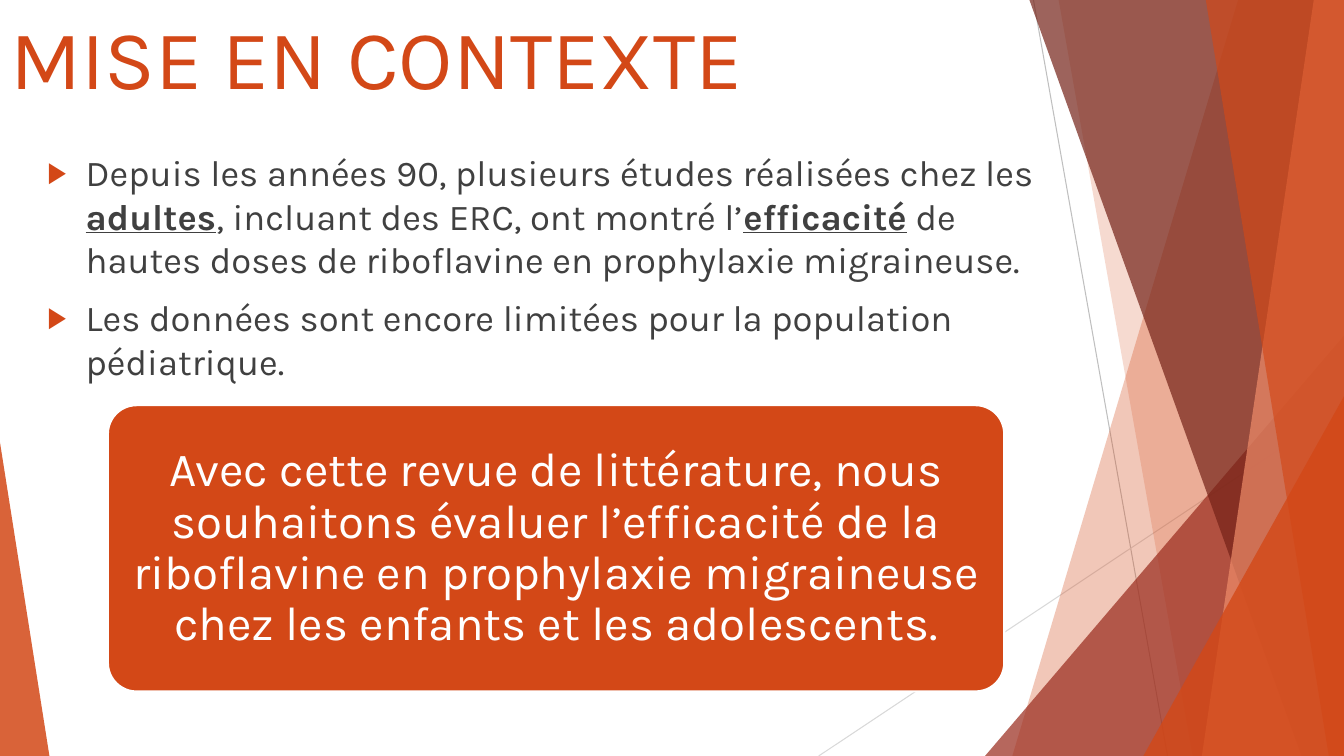
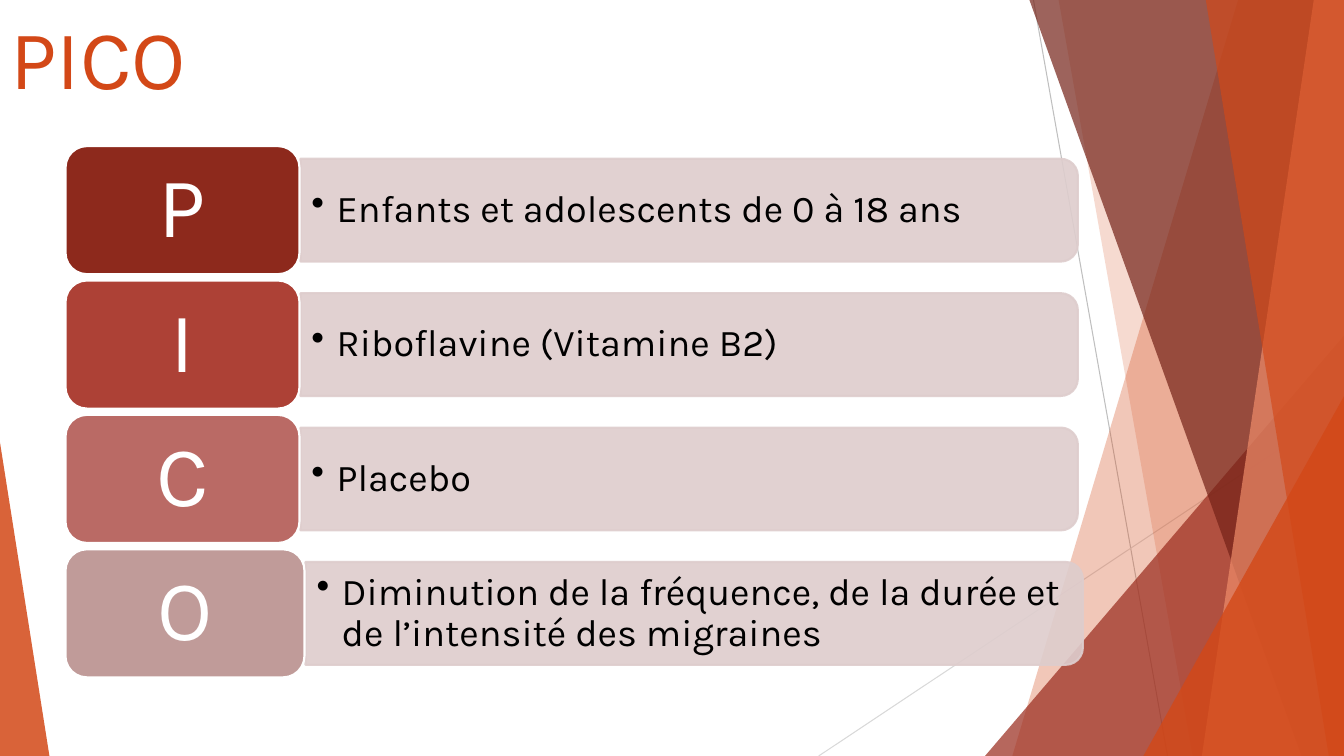
from dataclasses import dataclass

from lxml.etree import SubElement
from pptx import Presentation
from pptx.dml.color import RGBColor
from pptx.enum.shapes import MSO_CONNECTOR, MSO_SHAPE
from pptx.enum.text import MSO_ANCHOR, MSO_AUTO_SIZE, PP_ALIGN
from pptx.oxml.ns import qn
from pptx.util import Inches, Pt

STRAIGHT = MSO_CONNECTOR.STRAIGHT
ROUND = MSO_SHAPE.ROUNDED_RECTANGLE
TAB = MSO_SHAPE.ROUND_2_SAME_RECTANGLE
WEDGE = MSO_SHAPE.ISOSCELES_TRIANGLE
TOP, MIDDLE = MSO_ANCHOR.TOP, MSO_ANCHOR.MIDDLE
LEFT, CENTER = PP_ALIGN.LEFT, PP_ALIGN.CENTER
FIXED = MSO_AUTO_SIZE.NONE

WIDE, HIGH = 13.33, 7.5


@dataclass(frozen=True)
class Theme:
    font: str = "Karla"
    main: str = "D34817"
    brick: str = "9B2D1F"
    dark: str = "742217"
    peach: str = "EF8C6A"
    ink: str = "404040"
    black: str = "000000"
    white: str = "FFFFFF"
    bar: str = "DECDCD"
    gray: str = "BFBFBF"
    pale: str = "D9D9D9"
    tiles: tuple = ("8D291C", "AD4136", "BA6A65", "C09B99")
    title: int = 60
    body: int = 26
    call: int = 34
    tile: int = 61
    item: int = 27


class Deck:
    def __init__(self, theme):
        self.theme = theme
        self.prs = Presentation()
        self.prs.slide_width = Inches(WIDE)
        self.prs.slide_height = Inches(HIGH)
        self.slide = None

    def open(self, layout, title):
        self.slide = self.prs.slides.add_slide(self.prs.slide_layouts[layout])
        box = self.slide.shapes.title
        self.place(box, 0, 0, 9.4, 1.44)
        para = self.frame(box, TOP)
        para.alignment = LEFT
        self.run(para, title, self.theme.title, self.theme.main)

    def place(self, shape, left, top, width, height):
        shape.left, shape.top = Inches(left), Inches(top)
        shape.width, shape.height = Inches(width), Inches(height)

    def frame(self, shape, anchor, side=0.1, edge=0.05):
        frame = shape.text_frame
        frame.word_wrap = True
        frame.auto_size = FIXED
        frame.vertical_anchor = anchor
        frame.margin_left = frame.margin_right = Inches(side)
        frame.margin_top = frame.margin_bottom = Inches(edge)
        return frame.paragraphs[0]

    def run(self, para, text, size, color, strong=False):
        run = para.add_run()
        run.text = text
        font = run.font
        font.name, font.size = self.theme.font, Pt(size)
        font.bold = font.underline = strong
        font.color.rgb = RGBColor.from_string(color)

    def bullet(self, para, mark, indent, color, scale):
        props = para._p.get_or_add_pPr()
        props.set("marL", str(Inches(indent)))
        props.set("indent", str(-Inches(indent)))
        tint = SubElement(props, qn("a:buClr"))
        SubElement(tint, qn("a:srgbClr"), val=color)
        SubElement(props, qn("a:buSzPct"), val=str(scale * 1000))
        SubElement(props, qn("a:buChar"), char=mark)

    def paint(self, shape, fill, alpha=100, line=None):
        shape.shadow.inherit = False
        shape.fill.solid()
        shape.fill.fore_color.rgb = RGBColor.from_string(fill)
        if line:
            shape.line.color.rgb = RGBColor.from_string(line)
            shape.line.width = Pt(1.5)
        else:
            shape.line.fill.background()
        if alpha < 100:
            for tint in shape.element.spPr.iter(qn("a:srgbClr")):
                SubElement(tint, qn("a:alpha"), val=str(alpha * 1000))

    def shape(self, kind, spot, fill, alpha=100, line=None, bend=None):
        shape = self.slide.shapes.add_shape(kind, *map(Inches, spot))
        if bend is not None:
            shape.adjustments[0] = bend
        self.paint(shape, fill, alpha, line)
        return shape

    def line(self, start, end, color):
        line = self.slide.shapes.add_connector(
            STRAIGHT, *map(Inches, start + end))
        line.line.color.rgb = RGBColor.from_string(color)
        line.line.width = Pt(0.75)
        SubElement(line.element.spPr, qn("a:effectLst"))
        return line

    def band(self, high, low, fill, alpha):
        pen = self.slide.shapes.build_freeform(Inches(high), 0)
        ends = ((WIDE, 0), (WIDE, HIGH), (low, HIGH))
        pen.add_line_segments([(Inches(x), Inches(y)) for x, y in ends])
        shape = pen.convert_to_shape()
        self.paint(shape, fill, alpha)
        return shape

    def wedge(self, left, top, width, fill, alpha, peak):
        spot = (left, top, width, HIGH - top)
        return self.shape(WEDGE, spot, fill, alpha, bend=peak)

    def decor(self):
        look = self.theme
        parts = (
            self.line((10.25, 0), (11.58, HIGH), look.gray),
            self.line((WIDE, 4.03), (8.12, HIGH), look.pale),
            self.band(12.28, 10.04, look.main, 30),
            self.band(10.5, 11.83, look.main, 20),
            self.wedge(9.77, 3.33, 3.56, look.brick, 72, 1),
            self.band(10.21, 12.91, look.dark, 70),
            self.band(13.03, 11.92, look.peach, 70),
            self.band(11.96, 13.18, look.main, 65),
            self.wedge(11.34, 3.93, 1.99, look.main, 80, 1),
            self.wedge(0, 4.39, 0.49, look.main, 85, 0),
        )
        tree = self.prs.slide_master.shapes.element
        for rank, part in enumerate(parts):
            node = part.element
            next(node.iter(qn("p:cNvPr"))).set("id", str(100 + rank))
            tree.insert(2 + rank, node)

    def list(self, items):
        look = self.theme
        box = self.slide.placeholders[1]
        self.place(box, 0.37, 1.44, 10.3, 2.12)
        para = self.frame(box, TOP)
        for rank, item in enumerate(items):
            if rank:
                para = box.text_frame.add_paragraph()
            para.space_before = Pt(10)
            self.bullet(para, "▶", 0.38, look.main, 80)
            for text, strong in item:
                self.run(para, text, look.body, look.ink, strong)

    def card(self, spot, fill, text, size, side, edge, bend=None):
        card = self.shape(ROUND, spot, fill, line=self.theme.white, bend=bend)
        para = self.frame(card, MIDDLE, side, edge)
        para.alignment = CENTER
        para.line_spacing = 0.9
        self.run(para, text, size, self.theme.white)

    def row(self, rank, mark, text, width):
        look = self.theme
        left, high = 0.65, 1.27
        top = 1.45 + rank * 4 / 3
        mid = top + high / 2
        start = left + width + 0.01
        long, thick = 7.71, 1.02
        spot = (start + (long - thick) / 2, mid - long / 2, thick, long)
        self.shape(TAB, spot, look.bar, 90, look.bar).rotation = 90
        note = self.slide.shapes.add_textbox(
            *map(Inches, (start, mid - 0.46, 7.66, 0.92)))
        para = self.frame(note, MIDDLE, 0.11, 0.06)
        para.line_spacing = 0.9
        self.bullet(para, "•", 0.25, look.black, 100)
        self.run(para, text, look.item, look.black)
        self.card((left, top, width, high), look.tiles[rank], mark,
                  look.tile, 0.25, 0.13)


def main():
    look = Theme()
    deck = Deck(look)

    deck.open(1, "MISE EN CONTEXTE")
    deck.decor()
    deck.list((
        (("Depuis les années 90, plusieurs études réalisées chez les ", False),
         ("adultes", True),
         (", incluant des ERC, ont montré l’", False),
         ("efficacité", True),
         (" de hautes doses de riboflavine en prophylaxie migraineuse.",
          False)),
        (("Les données sont encore limitées pour la population pédiatrique.",
          False),),
    ))
    deck.card((1.07, 4.02, 8.89, 2.84), look.main,
              "Avec cette revue de littérature, nous souhaitons évaluer "
              "l’efficacité de la riboflavine en prophylaxie migraineuse "
              "chez les enfants et les adolescents.",
              look.call, 0.14, 0.14, 0.1)

    deck.open(5, "PICO")
    rows = (
        ("P", "Enfants et adolescents de 0 à 18 ans", 2.32),
        ("I", "Riboflavine (Vitamine B2)", 2.32),
        ("C", "Placebo", 2.32),
        ("O", "Diminution de la fréquence, de la durée et de l’intensité "
              "des migraines", 2.37),
    )
    for rank, (mark, text, width) in enumerate(rows):
        deck.row(rank, mark, text, width)

    deck.prs.save("out.pptx")


if __name__ == "__main__":
    main()
